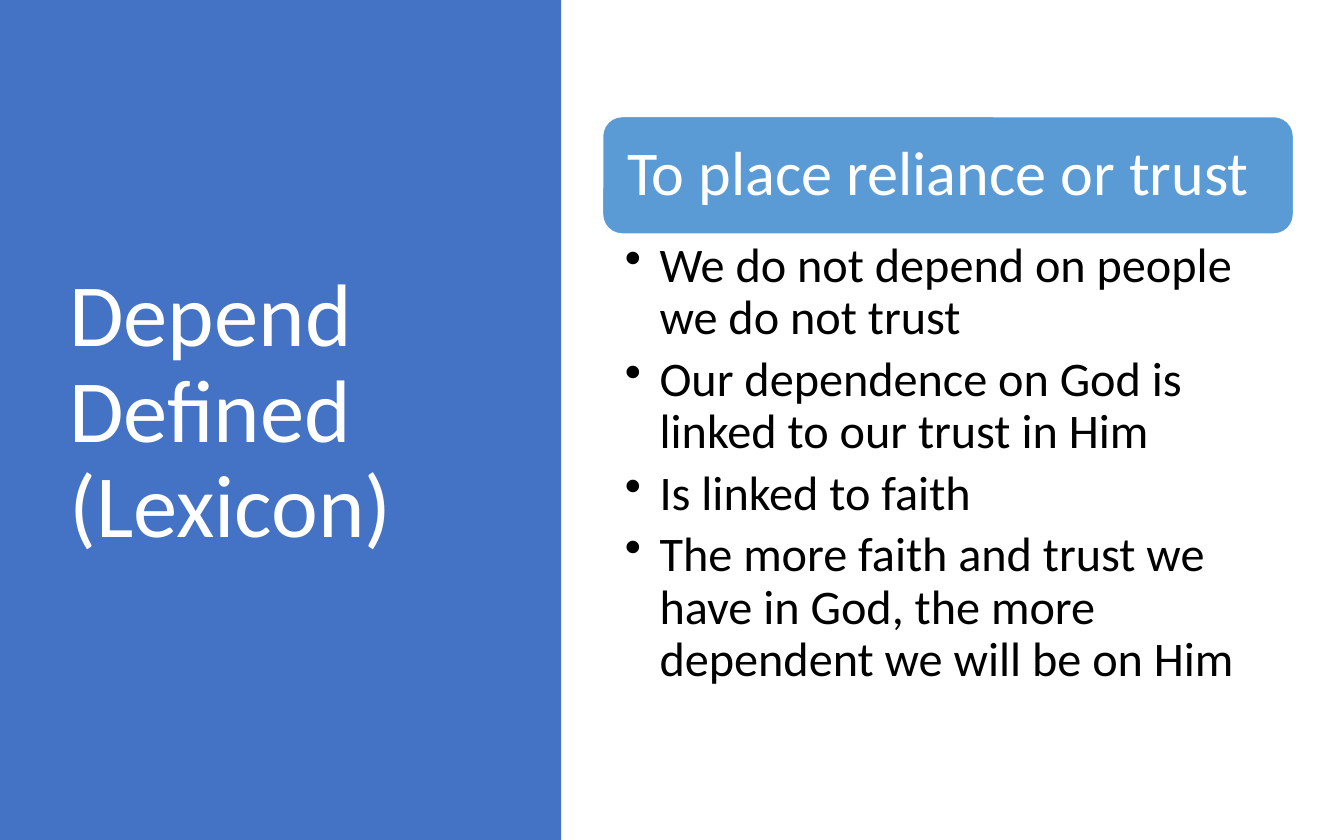
import pptx
import pptx.util
import pptx.dml.color
import pptx.enum.shapes
import pptx.enum.text
import lxml.etree

Inches = pptx.util.Inches
Pt = pptx.util.Pt
Color = pptx.dml.color.RGBColor
Kind = pptx.enum.shapes.MSO_SHAPE
Anchor = pptx.enum.text.MSO_ANCHOR

BLUE = Color(0x44, 0x72, 0xC4)
SKY = Color(0x5B, 0x9B, 0xD5)
WHITE = Color(0xFF, 0xFF, 0xFF)
BLACK = Color(0, 0, 0)

FONT = "Calibri"
POINTS = [
    "We do not depend on people we do not trust",
    "Our dependence on God is linked to our trust in Him",
    "Is linked to faith",
    "The more faith and trust we have in God, the more dependent we will be on Him",
]


def add_block(slide, kind, box, fill, line=None):
    shape = slide.shapes.add_shape(kind, *map(Inches, box))
    shape.shadow.inherit = False
    shape.fill.solid()
    shape.fill.fore_color.rgb = fill
    if line is None:
        shape.line.fill.background()
    else:
        shape.line.color.rgb = line
        shape.line.width = Pt(1)


def add_bullet(para, indent):
    props = para._p.get_or_add_pPr()
    props.set("marL", str(Inches(indent)))
    props.set("indent", str(-Inches(indent)))
    mark = lxml.etree.SubElement(props, pptx.oxml.ns.qn("a:buChar"))
    mark.set("char", "•")


def add_text(slide, box, lines, size, color, pads, anchor, after=0, indent=0):
    """Add wrapped text; pads are left, top, right, bottom in inches."""
    frame = slide.shapes.add_textbox(*map(Inches, box)).text_frame
    left, top, right, bottom = map(Inches, pads)
    form = {
        "word_wrap": True,
        "vertical_anchor": anchor,
        "margin_left": left,
        "margin_top": top,
        "margin_right": right,
        "margin_bottom": bottom,
    }
    for name, value in form.items():
        setattr(frame, name, value)
    frame.text = "\n".join(lines)
    for para in frame.paragraphs:
        para.line_spacing = 0.9
        para.space_after = Pt(after)
        if indent:
            add_bullet(para, indent)
        font = para.runs[0].font
        for name, value in {"name": FONT, "size": Pt(size)}.items():
            setattr(font, name, value)
        font.color.rgb = color


def main():
    deck = pptx.Presentation()
    deck.slide_width, deck.slide_height = Inches(12), Inches(7.5)
    slide = deck.slides.add_slide(deck.slide_layouts[6])

    add_block(slide, Kind.RECTANGLE, (0, 0, 5.01, 7.5), BLUE)
    add_text(slide, (0.52, 0.68, 3.75, 6.02), ["Depend Defined (Lexicon)"],
             57, WHITE, (0.1, 0.05, 0.1, 0.05), Anchor.MIDDLE)

    add_block(slide, Kind.ROUNDED_RECTANGLE, (5.38, 1.04, 6.17, 1.05), SKY, WHITE)
    add_text(slide, (5.43, 1.09, 6.06, 0.95), ["To place reliance or trust"],
             40, WHITE, (0.17,) * 4, Anchor.MIDDLE)
    add_text(slide, (5.38, 2.09, 6.17, 4.26), POINTS, 31, BLACK,
             (0.2, 0.06, 0.31, 0.06), Anchor.TOP, after=6.2, indent=0.31)

    deck.save("out.pptx")


if __name__ == "__main__":
    main()
